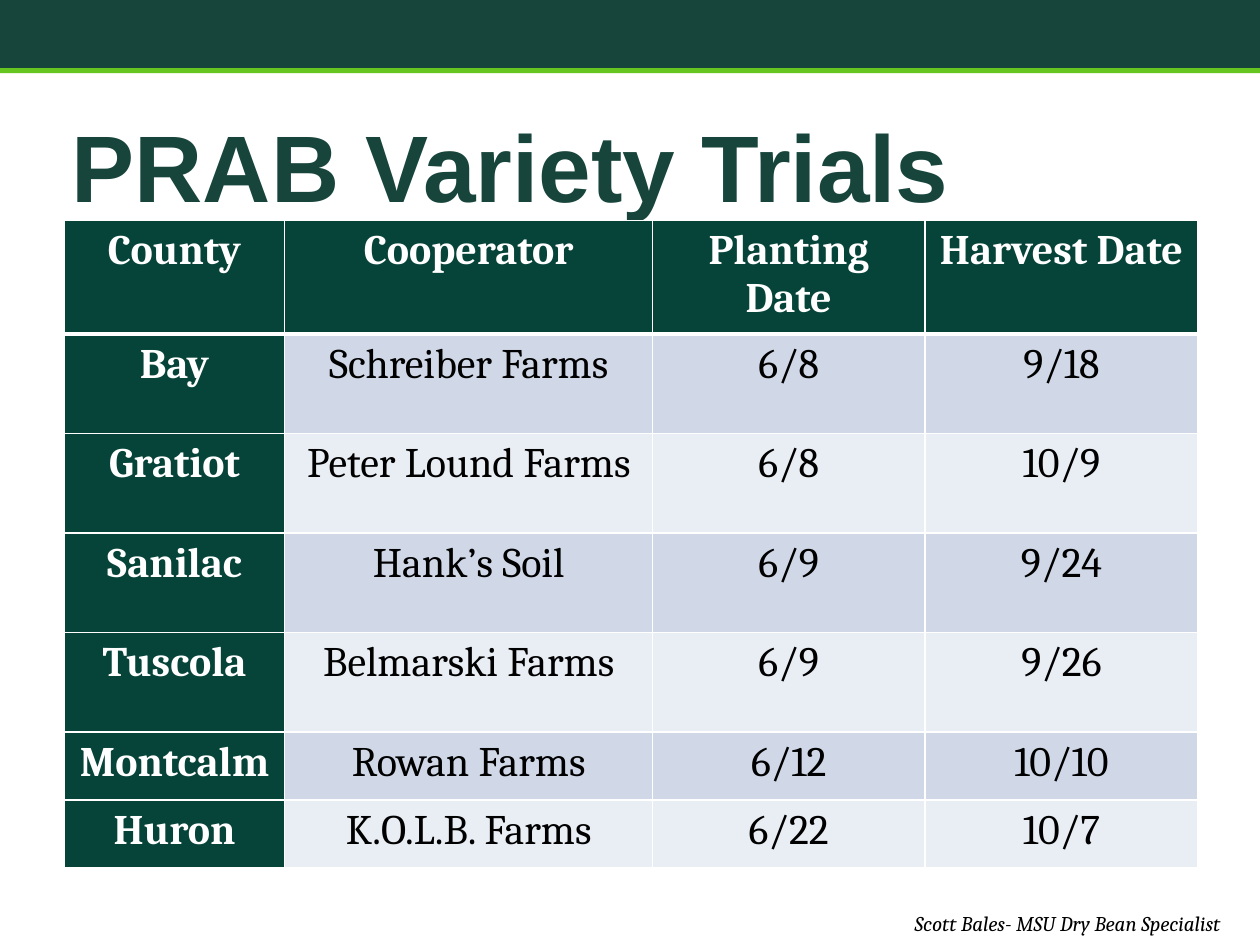
import pptx
import pptx.util
import pptx.dml.color
import pptx.enum.shapes
import pptx.enum.text
import pptx.oxml
import pptx.oxml.ns

Inches = pptx.util.Inches
Pt = pptx.util.Pt
ALIGN = pptx.enum.text.PP_ALIGN

HUES = {
    "band": "18453B",
    "lime": "67C521",
    "head": "064339",
    "odd": "D0D8E8",
    "even": "E9EDF4",
    "white": "FFFFFF",
    "black": "000000",
}

HEAD = ["County", "Cooperator", "Planting Date", "Harvest Date"]
TRIALS = [
    ["Bay", "Schreiber Farms", "6/8", "9/18"],
    ["Gratiot", "Peter Lound Farms", "6/8", "10/9"],
    ["Sanilac", "Hank’s Soil", "6/9", "9/24"],
    ["Tuscola", "Belmarski Farms", "6/9", "9/26"],
    ["Montcalm", "Rowan Farms", "6/12", "10/10"],
    ["Huron", "K.O.L.B. Farms", "6/22", "10/7"],
]
COLS = [1.75, 2.92, 2.16, 2.17]
ROWS = [0.79] * 5 + [0.54] * 2


class Deck:
    """Holds the style and the current slide."""

    def __init__(self, slide):
        self.slide = slide
        self.sans = "Arial"
        self.serif = "Cambria"

    def hue(self, name):
        return pptx.dml.color.RGBColor.from_string(HUES[name])

    def style(self, frame, face, size, hue, bold=False, slant=False, align=ALIGN.LEFT):
        for para in frame.paragraphs:
            para.alignment = align
            for run in para.runs:
                font = run.font
                font.name, font.size = face, Pt(size)
                font.bold, font.italic = bold, slant
                font.color.rgb = self.hue(hue)

    def bar(self, top, high, hue):
        kind = pptx.enum.shapes.MSO_SHAPE.RECTANGLE
        shape = self.slide.shapes.add_shape(
            kind, 0, Inches(top), Inches(10), Inches(high))
        shape.shadow.inherit = False
        shape.fill.solid()
        shape.fill.fore_color.rgb = self.hue(hue)
        shape.line.fill.background()

    def text(self, words, left, top, wide, high, *look, pad=0.1, **more):
        box = self.slide.shapes.add_textbox(
            Inches(left), Inches(top), Inches(wide), Inches(high))
        frame = box.text_frame
        frame.word_wrap = True
        frame.margin_left = Inches(pad)
        frame.text = words
        self.style(frame, *look, **more)

    def edge(self, cell, side, width):
        line = pptx.oxml.parse_xml(
            f'<a:ln{side} {pptx.oxml.ns.nsdecls("a")} w="{Pt(width)}">'
            f'<a:solidFill><a:srgbClr val="{HUES["white"]}"/></a:solidFill>'
            f'</a:ln{side}>')
        cell._tc.get_or_add_tcPr().append(line)

    def table(self, rows, left, top, cols, highs):
        grid = self.slide.shapes.add_table(
            len(rows), len(cols), Inches(left), Inches(top),
            Inches(sum(cols)), Inches(sum(highs))).table
        grid.first_col = True
        for col, wide in zip(grid.columns, cols):
            col.width = Inches(wide)
        for row, high in zip(grid.rows, highs):
            row.height = Inches(high)
        for r, row in enumerate(rows):
            for c, words in enumerate(row):
                self.cell(grid.cell(r, c), words, r, c)

    def cell(self, cell, words, r, c):
        label = r == 0 or c == 0
        cell.text_frame.text = words
        self.style(cell.text_frame, self.serif, 24,
                   "white" if label else "black", bold=label, align=ALIGN.CENTER)
        # The rule under the header is heavier than the rest
        heavy = {(0, "B"), (1, "T")}
        for side in "LRTB":
            self.edge(cell, side, 3 if (r, side) in heavy else 1)
        cell.fill.solid()
        band = "odd" if r % 2 else "even"
        cell.fill.fore_color.rgb = self.hue("head" if label else band)


def main():
    prs = pptx.Presentation()
    prs.slide_width, prs.slide_height = Inches(10), Inches(7.5)
    deck = Deck(prs.slides.add_slide(prs.slide_layouts[6]))

    # Top band
    deck.bar(0.53, 0.05, "lime")
    deck.bar(0, 0.54, "band")

    # Title
    deck.text("PRAB Variety Trials", 0.5, 0.81, 9, 0.9,
              deck.sans, 54, "band", bold=True, pad=0.07)

    # Credit line
    deck.text("Scott Bales- MSU Dry Bean Specialist", 7.16, 7.18, 3.02, 0.3,
              deck.serif, 12, "black", slant=True)

    # Trial sites
    deck.table([HEAD] + TRIALS, 0.51, 1.75, COLS, ROWS)

    prs.save("out.pptx")


if __name__ == "__main__":
    main()
